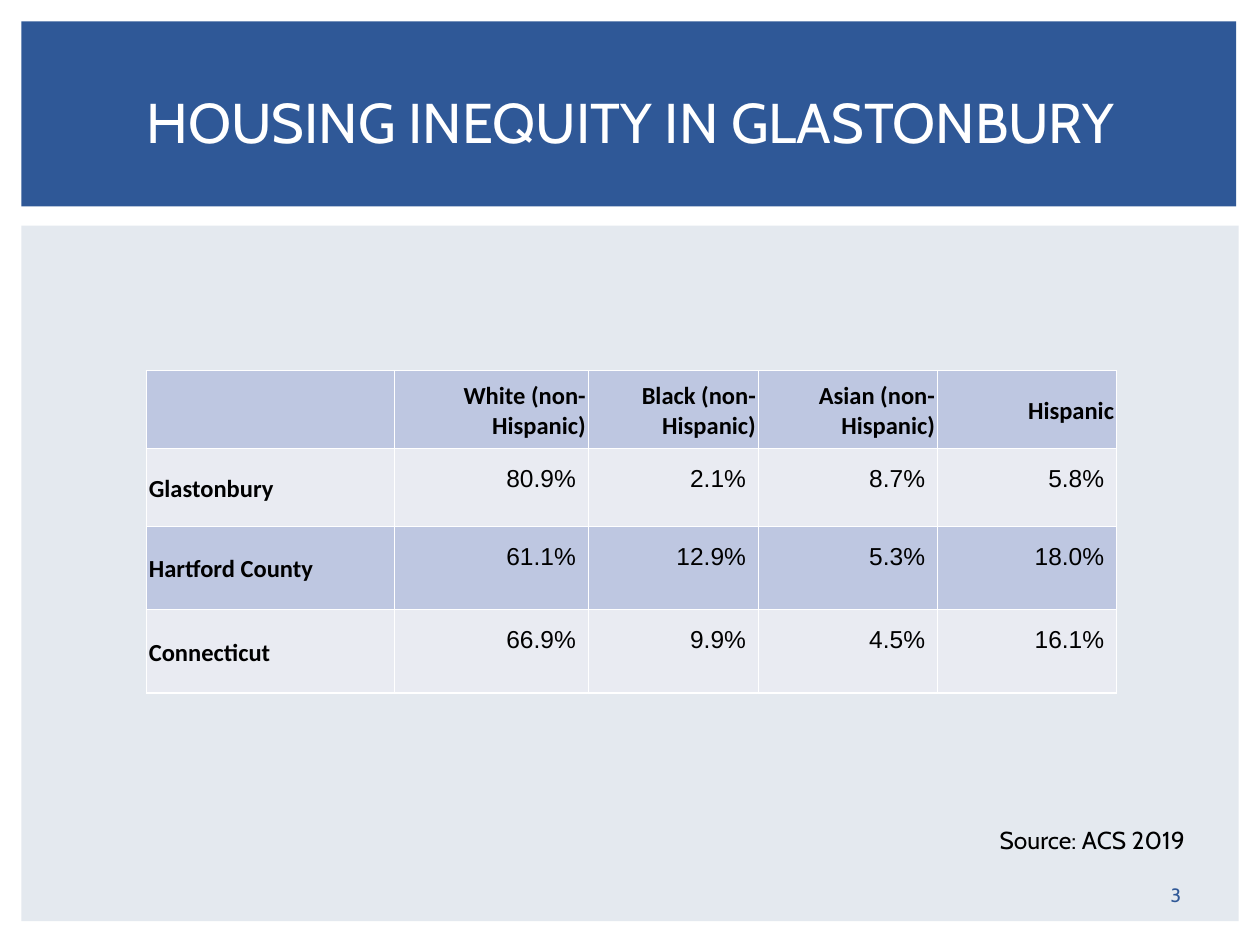
from dataclasses import dataclass
from typing import Any

from lxml import etree
from pptx import Presentation
from pptx.dml.color import RGBColor
from pptx.enum.shapes import MSO_SHAPE
from pptx.enum.text import MSO_ANCHOR, MSO_AUTO_SIZE, PP_ALIGN
from pptx.oxml.ns import qn
from pptx.util import Cm, Pt

RECTANGLE = MSO_SHAPE.RECTANGLE
TOP, MIDDLE = MSO_ANCHOR.TOP, MSO_ANCHOR.MIDDLE
LEFT, CENTER, RIGHT = PP_ALIGN.LEFT, PP_ALIGN.CENTER, PP_ALIGN.RIGHT
NO_AUTO_SIZE = MSO_AUTO_SIZE.NONE
TITLE_ONLY = 5
BORDER_SIDES = ("a:lnL", "a:lnR", "a:lnT", "a:lnB")


@dataclass(frozen=True)
class Theme:
    blue: str = "2F5897"
    pale: str = "E4E9EF"
    white: str = "FFFFFF"
    black: str = "000000"
    row_dark: str = "BEC7E1"
    row_light: str = "E9EBF2"
    title_size: int = 32
    body_size: int = 14
    number_size: int = 11
    border_width: int = 1
    slide_font: str = "Cabin"
    label_font: str = "Calibri"
    value_font: str = "Arial"


@dataclass(frozen=True)
class Area:
    left: float
    top: float
    width: float
    height: float

    def lengths(self) -> tuple[Cm, Cm, Cm, Cm]:
        return Cm(self.left), Cm(self.top), Cm(self.width), Cm(self.height)


@dataclass(frozen=True)
class TextStyle:
    font: str
    size: int
    color: str
    align: Any = LEFT
    bold: bool = False
    line_spacing: float = 1.0


@dataclass(frozen=True)
class Insets:
    left: float
    top: float
    right: float
    bottom: float


THEME = Theme()
BOX_INSETS = Insets(0.25, 0.13, 0.25, 0.13)
EVEN_INSETS = Insets(0.25, 0.25, 0.25, 0.25)
LABEL_INSETS = Insets(0.05, 0.05, 0.05, 0)

TITLE = TextStyle(THEME.slide_font, THEME.title_size, THEME.white, CENTER)
NUMBER = TextStyle(THEME.slide_font, THEME.number_size, THEME.blue, CENTER)
SOURCE = TextStyle(THEME.slide_font, THEME.body_size, THEME.black)
HEADING = TextStyle(THEME.label_font, THEME.body_size, THEME.black, RIGHT, True)
LABEL = TextStyle(THEME.label_font, THEME.body_size, THEME.black, LEFT, True)
VALUE = TextStyle(THEME.value_font, THEME.body_size, THEME.black, RIGHT, False, 1.15)

COLUMN_WIDTHS = (5.0, 3.91, 3.43, 3.61, 3.61)
ROW_HEIGHTS = (1.57, 1.57, 1.68, 1.68)
HOUSING_ROWS = (
    ("", "White (non-Hispanic)", "Black (non-Hispanic)", "Asian (non-Hispanic)", "Hispanic"),
    ("Glastonbury", "80.9%", "2.1%", "8.7%", "5.8%"),
    ("Hartford County", "61.1%", "12.9%", "5.3%", "18.0%"),
    ("Connecticut", "66.9%", "9.9%", "4.5%", "16.1%"),
)


def apply_format(target: Any, values: dict[str, Any]) -> None:
    for name, value in values.items():
        setattr(target, name, value)


def margins(insets: Insets) -> dict[str, Cm]:
    return {
        "margin_left": Cm(insets.left),
        "margin_top": Cm(insets.top),
        "margin_right": Cm(insets.right),
        "margin_bottom": Cm(insets.bottom),
    }


def write_text(frame: Any, text: str, style: TextStyle) -> None:
    para = frame.paragraphs[0]
    apply_format(para, {"alignment": style.align, "line_spacing": style.line_spacing})
    span = para.add_run()
    span.text = text
    apply_format(span.font, {"name": style.font, "size": Pt(style.size), "bold": style.bold})
    span.font.color.rgb = RGBColor.from_string(style.color)


def fill_box(box: Any, text: str, style: TextStyle, insets: Insets, anchor: Any) -> None:
    frame = box.text_frame
    apply_format(frame, {
        "word_wrap": True,
        "auto_size": NO_AUTO_SIZE,
        "vertical_anchor": anchor,
        **margins(insets),
    })
    write_text(frame, text, style)


def add_panel(page: Any, area: Area, color: str) -> None:
    panel = page.shapes.add_shape(RECTANGLE, *area.lengths())
    panel.shadow.inherit = False
    panel.fill.solid()
    panel.fill.fore_color.rgb = RGBColor.from_string(color)
    panel.line.fill.background()
    page.shapes.title.element.addprevious(panel.element)


def add_borders(cell: Any) -> None:
    properties = cell._tc.get_or_add_tcPr()
    for position, side in enumerate(BORDER_SIDES):
        line = etree.Element(qn(side), w=str(Pt(THEME.border_width)))
        solid = etree.SubElement(line, qn("a:solidFill"))
        etree.SubElement(solid, qn("a:srgbClr"), val=THEME.white)
        properties.insert(position, line)


def format_cell(cell: Any, text: str, row: int, column: int) -> None:
    is_value = row > 0 and column > 0
    style = VALUE if is_value else HEADING if row == 0 else LABEL
    apply_format(cell, {
        "vertical_anchor": TOP if is_value else MIDDLE,
        **margins(EVEN_INSETS if is_value else LABEL_INSETS),
    })
    cell.fill.solid()
    color = THEME.row_light if row % 2 else THEME.row_dark
    cell.fill.fore_color.rgb = RGBColor.from_string(color)
    add_borders(cell)
    if text:
        write_text(cell.text_frame, text, style)


def add_housing_table(page: Any, left: float, top: float) -> None:
    area = Area(left, top, sum(COLUMN_WIDTHS), sum(ROW_HEIGHTS))
    table = page.shapes.add_table(len(ROW_HEIGHTS), len(COLUMN_WIDTHS), *area.lengths()).table
    apply_format(table, {"first_row": False, "horz_banding": False})
    for column, width in zip(table.columns, COLUMN_WIDTHS):
        column.width = Cm(width)
    for row, height in zip(table.rows, ROW_HEIGHTS):
        row.height = Cm(height)
    for row, texts in enumerate(HOUSING_ROWS):
        for column, text in enumerate(texts):
            format_cell(table.cell(row, column), text, row, column)


def main() -> None:
    deck = Presentation()
    apply_format(deck, {"slide_width": Cm(25.4), "slide_height": Cm(19.05)})
    page = deck.slides.add_slide(deck.slide_layouts[TITLE_ONLY])

    add_panel(page, Area(0.43, 4.55, 24.54, 14.02), THEME.pale)
    add_panel(page, Area(0.43, 0.43, 24.49, 3.73), THEME.blue)

    title = page.shapes.title
    places = Area(1.07, 0.99, 23.29, 2.92).lengths()
    apply_format(title, dict(zip(("left", "top", "width", "height"), places)))
    fill_box(title, "HOUSING INEQUITY IN GLASTONBURY", TITLE, BOX_INSETS, MIDDLE)

    number = page.shapes.add_textbox(*Area(22.89, 17.65, 1.63, 0.76).lengths())
    fill_box(number, "3", NUMBER, BOX_INSETS, MIDDLE)

    add_housing_table(page, 2.95, 7.47)

    source = page.shapes.add_textbox(*Area(19.79, 16.38, 4.85, 1.12).lengths())
    fill_box(source, " Source: ACS 2019", SOURCE, EVEN_INSETS, TOP)

    deck.save("out.pptx")


if __name__ == "__main__":
    main()
